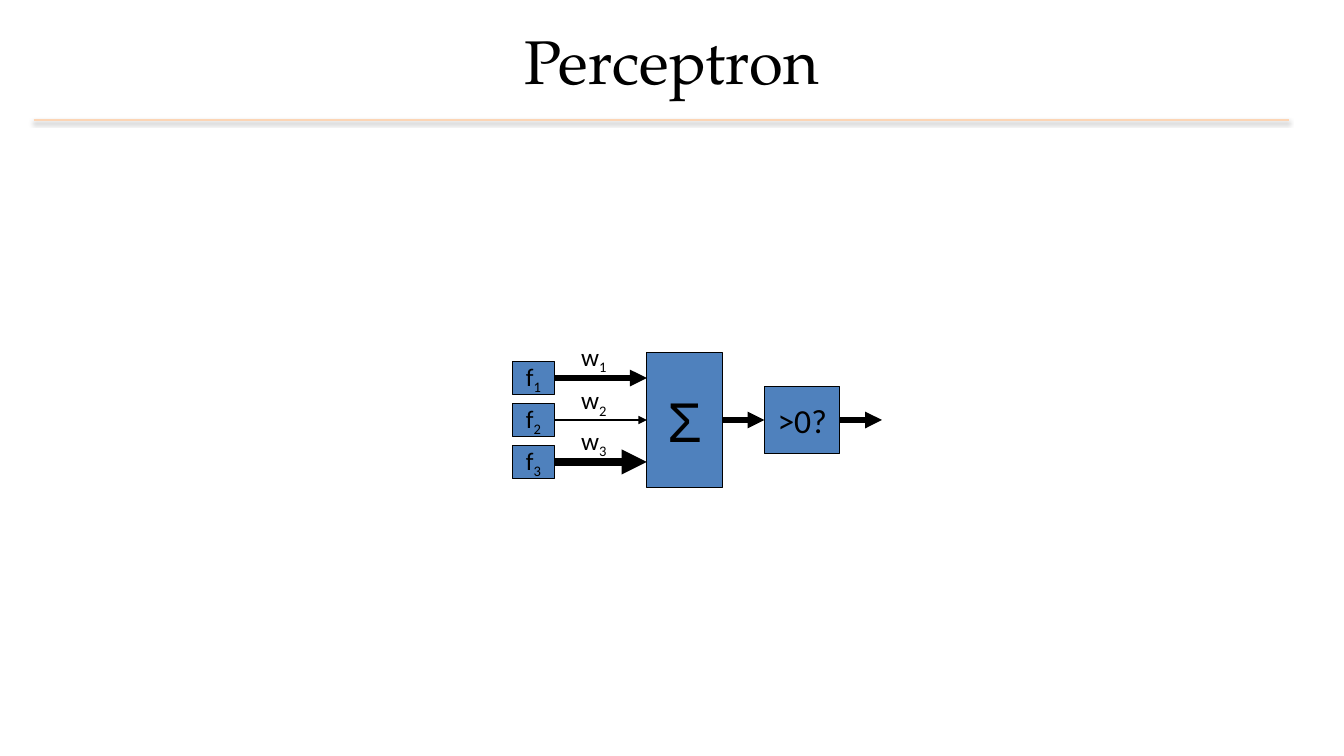
"""Build the Perceptron slide: weighted features, a sum and a threshold."""
from lxml import etree
from pptx import Presentation
from pptx.dml.color import RGBColor
from pptx.enum.shapes import MSO_CONNECTOR, MSO_SHAPE
from pptx.enum.text import MSO_ANCHOR, PP_ALIGN
from pptx.oxml import parse_xml
from pptx.oxml.ns import nsdecls, qn
from pptx.util import Inches, Pt

STRAIGHT = MSO_CONNECTOR.STRAIGHT
RECTANGLE = MSO_SHAPE.RECTANGLE
MIDDLE, TOP = MSO_ANCHOR.MIDDLE, MSO_ANCHOR.TOP
CENTER, LEFT = PP_ALIGN.CENTER, PP_ALIGN.LEFT
BLACK = RGBColor(0x00, 0x00, 0x00)
BLUE = RGBColor(0x4F, 0x81, 0xBD)
PEACH = RGBColor(0xFC, 0xD5, 0xB5)
UNIT = Inches(1) / 12
COLUMNS, ROWS = 160, 90
AXIS = 50
FEATURE_STEP = 5


def write(holder, text, size, font="Calibri", subscript="", align=CENTER, anchor=MIDDLE, wrap=False):
    frame = holder.text_frame
    for name, value in {"word_wrap": wrap, "vertical_anchor": anchor}.items():
        setattr(frame, name, value)
    paragraph = frame.paragraphs[0]
    paragraph.alignment = align
    for part in filter(None, (text, subscript)):
        run = paragraph.add_run()
        run.text = part
        for name, value in {"size": Pt(size), "name": font}.items():
            setattr(run.font, name, value)
        run.font.color.rgb = BLACK
    if subscript:
        run.font._element.set("baseline", "-25000")


def connect(start, end, row, width, color=BLACK):
    line = slide.shapes.add_connector(
        STRAIGHT, *(round(v * UNIT) for v in (start, row, end, row)))
    line.line.color.rgb = color
    line.line.width = Pt(width)
    effects = etree.SubElement(line._element.spPr, qn("a:effectLst"))
    return line, effects


deck = Presentation()
deck.slide_width, deck.slide_height = round(COLUMNS * UNIT), round(ROWS * UNIT)
slide = deck.slides.add_slide(deck.slide_layouts[6])

rule, rule_effects = connect(4, 153.4, 14.3, 1, PEACH)
rule_effects.append(parse_xml(
    f'<a:outerShdw {nsdecls("a")} blurRad="40000" dist="20000" dir="5400000" rotWithShape="0">'
    '<a:srgbClr val="000000"><a:alpha val="38000"/></a:srgbClr></a:outerShdw>'))

title = slide.shapes.add_textbox(*(round(v * UNIT) for v in (0, -0.4, COLUMNS, 15)))
write(title, "Perceptron", 44, "TeX Gyre Pagella", wrap=True)

arrows = [(66, 77, AXIS + (index - 1) * FEATURE_STEP, weight)
          for index, weight in enumerate((4, 1, 6))]
arrows += [(86, 91, AXIS, 4), (100, 105, AXIS, 4)]
for start, end, row, width in arrows:
    arrow, arrow_effects = connect(start, end, row, width)
    etree.SubElement(arrow.line._get_or_add_ln(), qn("a:tailEnd"), type="triangle")

boxes = [(61, AXIS + (index - 1) * FEATURE_STEP, 5, 4, "f", str(index + 1), 18, "Calibri")
         for index in range(3)]
boxes += [(77, AXIS, 9, 16, "Σ", "", 40, "Arial"),
          (91, AXIS, 9, 8, ">0?", "", 24, "Calibri")]
for left, center, width, height, text, subscript, size, font in boxes:
    box = slide.shapes.add_shape(
        RECTANGLE, *(round(v * UNIT) for v in (left, center - height / 2, width, height)))
    box.shadow.inherit = False
    box.fill.solid()
    box.fill.fore_color.rgb = BLUE
    box.line.color.rgb = BLACK
    box.line.width = Pt(0.75)
    write(box, text, size, font, subscript)

for number, top in enumerate((40, 45.2, 50), start=1):
    weight_label = slide.shapes.add_textbox(*(round(v * UNIT) for v in (68, top, 7, 5.3)))
    write(weight_label, "w", 18, subscript=str(number), align=LEFT, anchor=TOP, wrap=True)

deck.save("out.pptx")
